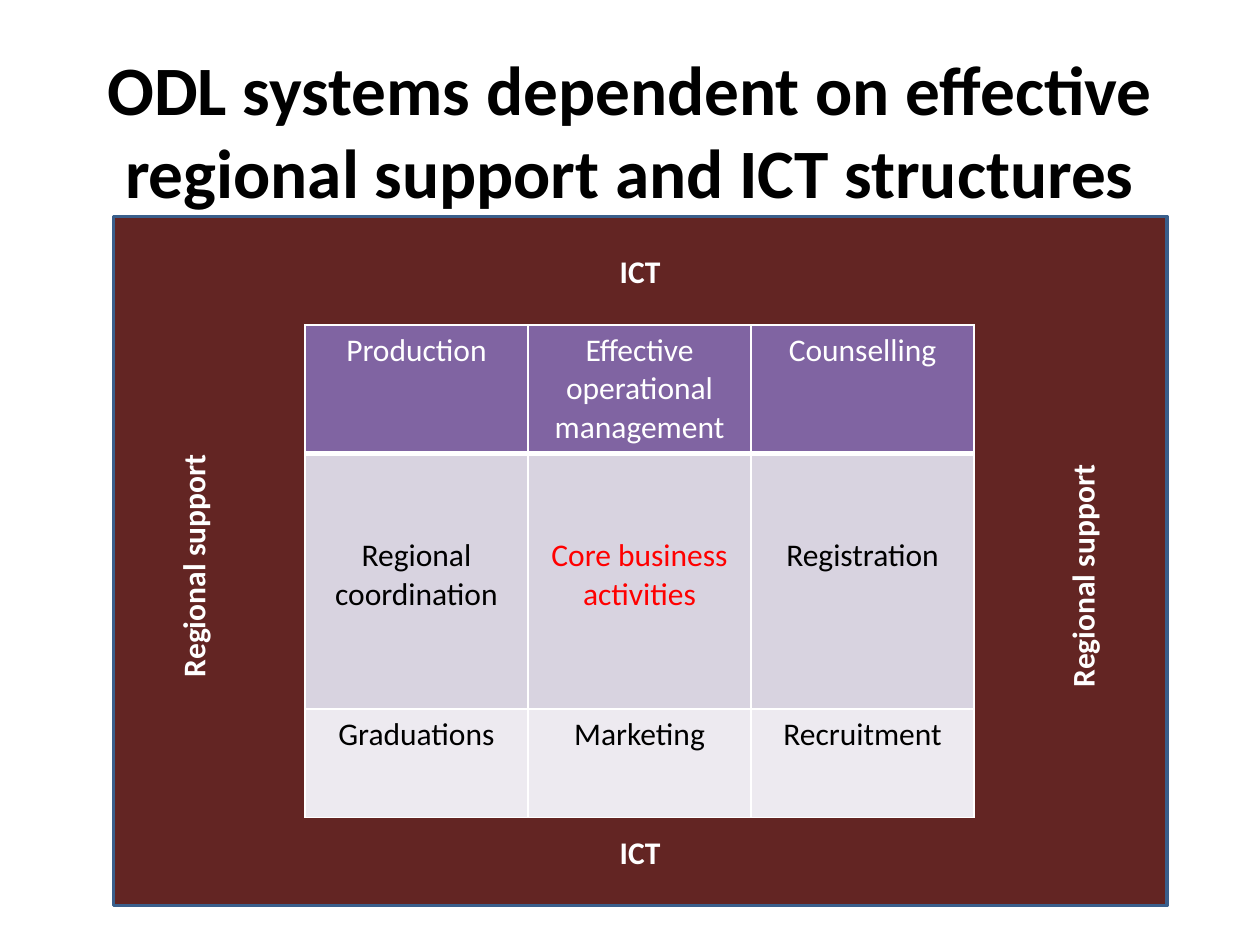
from lxml import etree
from pptx import Presentation
from pptx import util as u
from pptx.dml import color
from pptx.enum import shapes, text
from pptx.oxml import ns

WHITE, BLACK, RED = "FFFFFF", "000000", "FF0000"
MAROON, BLUE, PURPLE = "632523", "3A5F8C", "8064A2"
LILAC, PALE = "D8D3E0", "EDEAF0"


def rgb(value):
    """Turn a hex string into a colour."""
    return color.RGBColor.from_string(value)


def points(box):
    """Turn a box of left, top, width and height into lengths."""
    return [u.Pt(value) for value in box]


def apply(target, formats):
    """Set each format value on the target."""
    for name, value in formats.items():
        setattr(target, name, value)


def write(frame, words, size, ink, bold=False):
    """Write one centred paragraph into a text frame."""
    para = frame.paragraphs[0]
    para.alignment = text.PP_ALIGN.CENTER
    span = para.add_run()
    span.text = words
    apply(span.font, {"name": "Calibri", "size": u.Pt(size), "bold": bold})
    span.font.color.rgb = rgb(ink)


def add_title(page, box, words):
    """Place the slide title in its placeholder."""
    title = page.shapes.title
    apply(title, dict(zip(("left", "top", "width", "height"), points(box))))
    apply(title.text_frame, {"word_wrap": True,
                             "auto_size": text.MSO_AUTO_SIZE.NONE,
                             "vertical_anchor": text.MSO_ANCHOR.MIDDLE})
    write(title.text_frame, words, 39.6, BLACK, True)


def add_panel(page, box):
    """Draw the support frame behind the table."""
    panel = page.shapes.add_shape(shapes.MSO_SHAPE.RECTANGLE, *points(box))
    panel.shadow.inherit = False
    panel.fill.solid()
    panel.fill.fore_color.rgb = rgb(MAROON)
    panel.line.color.rgb = rgb(BLUE)
    panel.line.width = u.Pt(2)


def add_label(page, box, words, upright=False):
    """Place a white label, turned to read upwards if upright."""
    frame = page.shapes.add_textbox(*points(box)).text_frame
    frame.word_wrap = True
    if upright:
        frame._txBody.bodyPr.set("vert", "vert270")
    write(frame, words, 18, WHITE, True)


def add_border(cell, side, width):
    """Give one side of a cell a white line."""
    line = etree.Element(ns.qn(f"a:ln{side}"), w=str(u.Pt(width)))
    fill = etree.SubElement(line, ns.qn("a:solidFill"))
    etree.SubElement(fill, ns.qn("a:srgbClr"), val=WHITE)
    properties = cell._tc.get_or_add_tcPr()
    properties.insert("LRTB".index(side), line)


def add_activities(page, box, heights, rows):
    """Place the table of activities, with one fill and top margin a row."""
    columns = len(rows[0][2])
    table = page.shapes.add_table(len(rows), columns, *points(box)).table
    for column in table.columns:
        column.width = u.Pt(box[2] / columns)
    for r, (fill, margin, entries) in enumerate(rows):
        table.rows[r].height = u.Pt(heights[r])
        for c, (words, ink) in enumerate(entries):
            cell = table.cell(r, c)
            cell.margin_top = u.Pt(margin)
            cell.fill.solid()
            cell.fill.fore_color.rgb = rgb(fill)
            write(cell.text_frame, words, 18, ink)
            for side in "LRTB":
                heavy = (r, side) in ((0, "B"), (1, "T"))
                add_border(cell, side, 3 if heavy else 1)


def main():
    """Build the slide and save it."""
    deck = Presentation()
    apply(deck, {"slide_width": u.Pt(720), "slide_height": u.Pt(540)})
    page = deck.slides.add_slide(deck.slide_layouts[5])
    add_panel(page, (64.8, 123.8, 602, 393.8))
    add_title(page, (36, 28.8, 648, 90),
              "ODL systems dependent on effective "
              "regional support and ICT structures")
    add_activities(page, (174.24, 185.8, 382.5, 281.5), (73.5, 146, 62), [
        (PURPLE, 3.6, [("Production", WHITE),
                       ("Effective operational management", WHITE),
                       ("Counselling", WHITE)]),
        (LILAC, 47.5, [("Regional coordination", BLACK),
                       ("Core business activities", RED),
                       ("Registration", BLACK)]),
        (PALE, 3.6, [("Graduations", BLACK), ("Marketing", BLACK),
                     ("Recruitment", BLACK)]),
    ])
    for top in (140.4, 472.3):
        add_label(page, (180, top, 371.5, 29), "ICT")
    for left, top in ((95.8, 180), (604, 185.8)):
        add_label(page, (left, top, 36, 286.6), "Regional support", True)
    deck.save("out.pptx")


if __name__ == "__main__":
    main()
